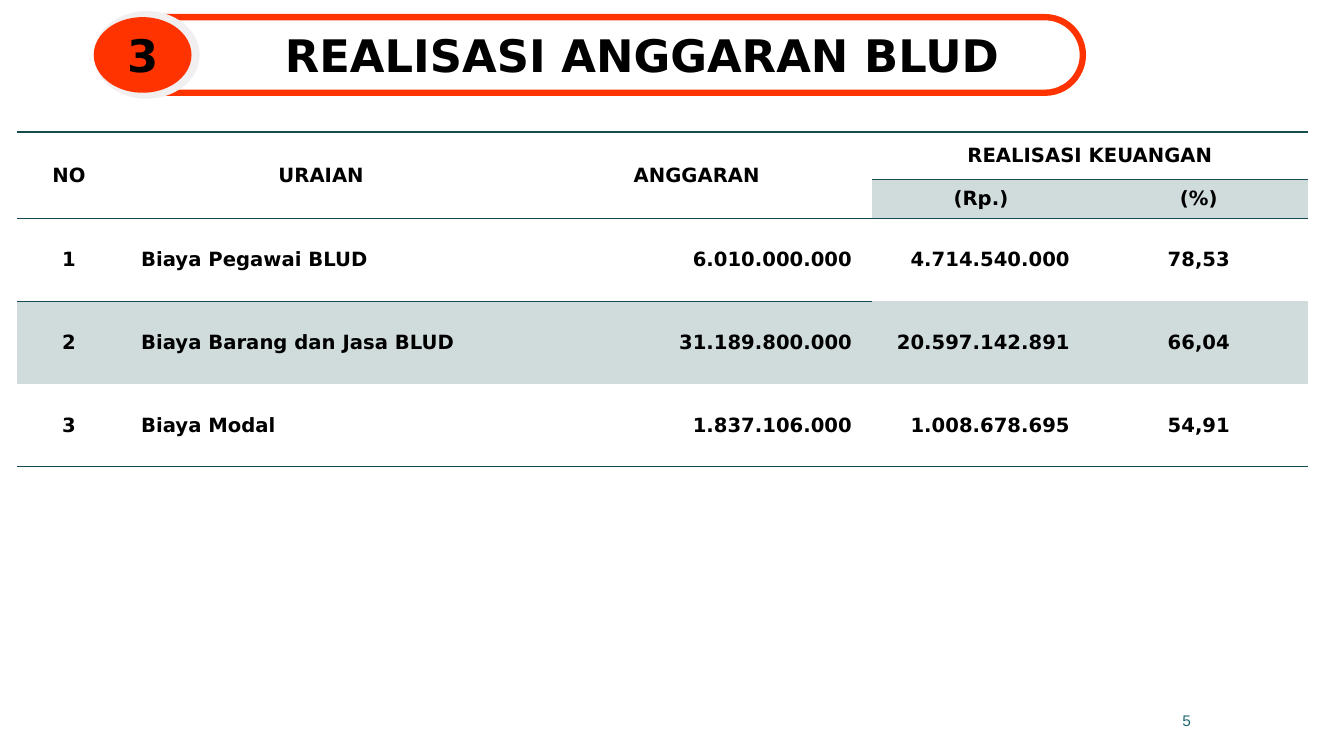
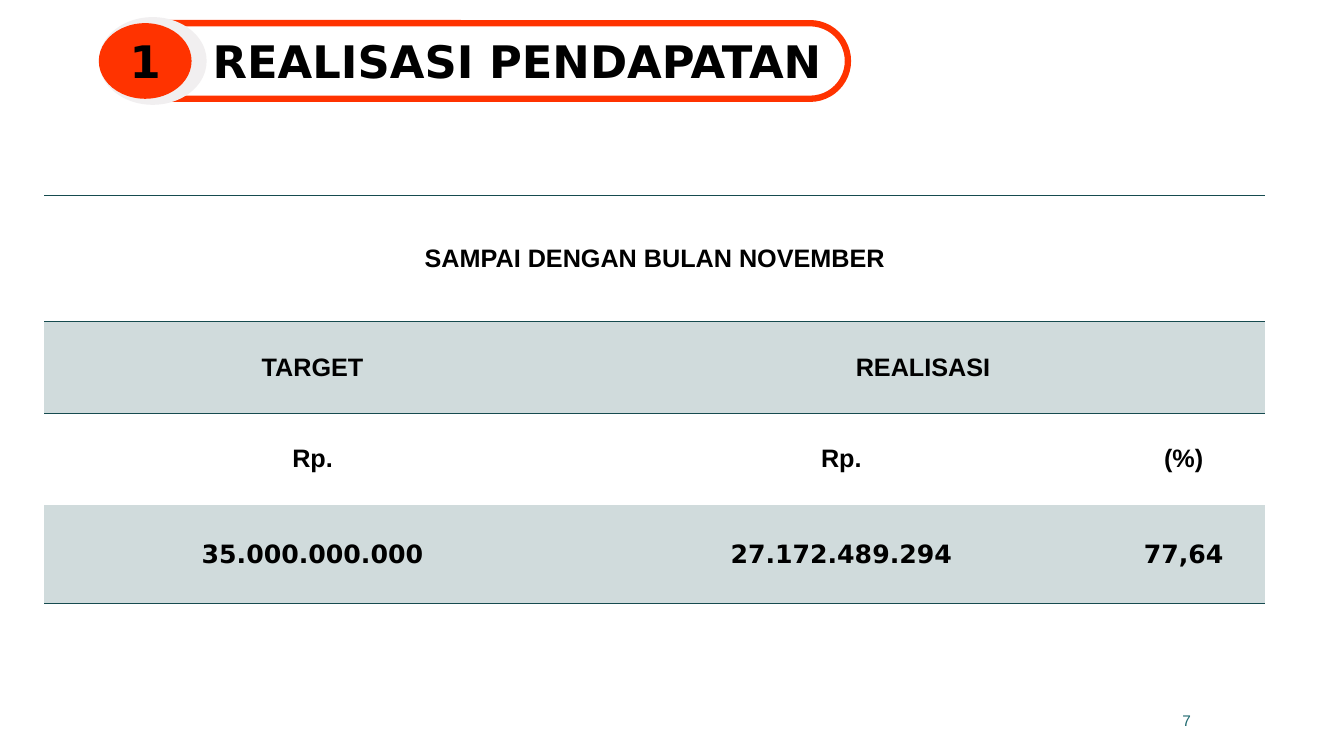
from dataclasses import dataclass

from lxml import etree
from pptx import Presentation
from pptx.dml.color import RGBColor
from pptx.enum import shapes, text
from pptx.oxml import ns
from pptx.util import Inches, Pt


@dataclass(frozen=True)
class Theme:
    """Colours, fonts and type sizes shared by the slides."""
    ink: str = "000000"
    accent: str = "FF3300"
    halo: str = "F1EFF0"
    band: str = "D0DBDC"
    rule: str = "164B4F"
    page: str = "1F696F"
    display: str = "DejaVu Sans"
    plain: str = "Arial"
    title_size: int = 32
    page_size: int = 11
    rule_width: int = 1
    outline_width: float = 4.5


THEME = Theme()
NO_STYLE = "{2D5ABB26-0587-4C30-8999-92F81FD0307C}"
ALIGN = {"l": text.PP_ALIGN.LEFT, "c": text.PP_ALIGN.CENTER, "r": text.PP_ALIGN.RIGHT}

SLIDES = [
    {
        "number": "3",
        "title": "REALISASI ANGGARAN BLUD",
        "title_span": (1.74, 9.26),
        "pill": (1.09, 0.17, 9.65),
        "badge": (0.93, 0.97, 1.05),
        "page": "5",
        "table": {
            "origin": (0.17, 1.31),
            "columns": [1.03, 3.97, 3.48, 2.16, 2.16],
            "heights": [0.47, 0.39, 0.82, 0.82, 0.82],
            "rows": [
                ["NO", "URAIAN", "ANGGARAN", "REALISASI KEUANGAN", ""],
                ["", "", "", "(Rp.)", "(%)"],
                ["1", "Biaya Pegawai BLUD", "6.010.000.000", "4.714.540.000", "78,53"],
                ["2", "Biaya Barang dan Jasa BLUD", "31.189.800.000", "20.597.142.891", "66,04"],
                ["3", "Biaya Modal", "1.837.106.000", "1.008.678.695", "54,91"],
            ],
            "merges": [(0, 0, 1, 0), (0, 1, 1, 1), (0, 2, 1, 2), (0, 3, 0, 4)],
            "rules": {0: range(5), 1: range(3, 5), 2: range(3), 5: range(5)},
            "bands": {1: range(3, 5), 3: range(5)},
            "header_rows": 2,
            "body_align": "clrrc",
            "size": 14,
            "fonts": [THEME.display] * 5,
        },
    },
    {
        "number": "1",
        "title": "REALISASI PENDAPATAN",
        "title_span": (0.83, 8.6),
        "pill": (1.1, 0.23, 7.31),
        "badge": (0.98, 0.92, 1.07),
        "page": "7",
        "table": {
            "origin": (0.44, 1.94),
            "columns": [5.32, 5.17, 1.62],
            "heights": [1.25, 0.91, 0.91, 0.98],
            "rows": [
                ["SAMPAI DENGAN BULAN NOVEMBER", "", ""],
                ["TARGET", "REALISASI", ""],
                ["Rp.", "Rp.", "(%)"],
                ["35.000.000.000", "27.172.489.294", "77,64"],
            ],
            "merges": [(0, 0, 0, 2), (1, 1, 1, 2)],
            "rules": {0: range(3), 1: range(3), 4: range(3)},
            "bands": {1: range(3), 3: range(3)},
            "header_rows": 3,
            "body_align": "ccc",
            "size": 18,
            "fonts": [THEME.plain] * 3 + [THEME.display],
        },
    },
]


def write(frame, words, size, font=THEME.display, color=THEME.ink, align="c", bold=True):
    """Put one formatted, vertically centred paragraph in a text frame."""
    frame.text = words
    frame.vertical_anchor = text.MSO_ANCHOR.MIDDLE
    paragraph = frame.paragraphs[0]
    paragraph.alignment = ALIGN[align]
    for run in paragraph.runs:
        run.font.size, run.font.name, run.font.bold = Pt(size), font, bold
        run.font.color.rgb = RGBColor.from_string(color)


def add_figure(slide, kind, box, fill=None, outline=None):
    """Add a flat preset shape with an optional fill and outline."""
    figure = slide.shapes.add_shape(kind, *map(Inches, box))
    figure.shadow.inherit = False
    if fill:
        figure.fill.solid()
        figure.fill.fore_color.rgb = RGBColor.from_string(fill)
    else:
        figure.fill.background()
    if outline:
        figure.line.color.rgb = RGBColor.from_string(outline)
        figure.line.width = Pt(THEME.outline_width)
    else:
        figure.line.fill.background()
    return figure


def add_heading(slide, content):
    """Build the outlined title pill with its numbered badge."""
    left, top, width = content["pill"]
    height, halo_margin = 0.75, 0.06
    badge_left, badge_width, halo_width = content["badge"]
    title_left, title_width = content["title_span"]

    title = slide.shapes.title
    title.left, title.top = Inches(title_left), Inches(top)
    title.width, title.height = Inches(title_width), Inches(height)
    title.text_frame.auto_size = text.MSO_AUTO_SIZE.NONE
    write(title.text_frame, content["title"], THEME.title_size)

    pill = add_figure(slide, shapes.MSO_SHAPE.ROUNDED_RECTANGLE,
                      (left, top, width, height), outline=THEME.accent)
    pill.adjustments[0] = 0.5
    add_figure(slide, shapes.MSO_SHAPE.OVAL,
               (badge_left, top - halo_margin, halo_width, height + 2 * halo_margin),
               fill=THEME.halo)
    badge = add_figure(slide, shapes.MSO_SHAPE.OVAL,
                       (badge_left, top, badge_width, height), fill=THEME.accent)
    write(badge.text_frame, content["number"], THEME.title_size)


def add_border(cell, side):
    """Draw a rule along the top (lnT) or bottom (lnB) of a cell."""
    line = etree.SubElement(cell._tc.get_or_add_tcPr(), ns.qn("a:" + side),
                            w=str(Pt(THEME.rule_width)))
    fill = etree.SubElement(line, ns.qn("a:solidFill"))
    etree.SubElement(fill, ns.qn("a:srgbClr"), val=THEME.rule)


def add_figures_table(slide, content):
    """Build a ruled and banded table from its content."""
    rows, columns, heights = content["rows"], content["columns"], content["heights"]
    size = (sum(columns), sum(heights))
    table = slide.shapes.add_table(len(rows), len(columns),
                                   *map(Inches, content["origin"] + size)).table
    table.first_row = table.horz_banding = False
    table._tbl.tblPr.find(ns.qn("a:tableStyleId")).text = NO_STYLE
    for column, width in zip(table.columns, columns):
        column.width = Inches(width)
    for row, height in zip(table.rows, heights):
        row.height = Inches(height)

    for boundary, ruled in sorted(content["rules"].items()):
        for c in ruled:
            if boundary > 0:
                add_border(table.cell(boundary - 1, c), "lnB")
            if boundary < len(rows):
                add_border(table.cell(boundary, c), "lnT")

    for r, words_in_row in enumerate(rows):
        for c, words in enumerate(words_in_row):
            cell = table.cell(r, c)
            cell.margin_left = cell.margin_right = Inches(0.2)
            cell.margin_top = cell.margin_bottom = Inches(0.08)
            if c in content["bands"].get(r, ()):
                cell.fill.solid()
                cell.fill.fore_color.rgb = RGBColor.from_string(THEME.band)
            else:
                cell.fill.background()
            align = "c" if r < content["header_rows"] else content["body_align"][c]
            write(cell.text_frame, words, content["size"], content["fonts"][r], align=align)
            cell.vertical_anchor = text.MSO_ANCHOR.MIDDLE

    for top, left, bottom, right in content["merges"]:
        table.cell(top, left).merge(table.cell(bottom, right))


def add_page_number(slide, number):
    """Write the page number at the lower right."""
    box = slide.shapes.add_textbox(*map(Inches, (8.8, 6.95, 3.11, 0.4)))
    box.text_frame.word_wrap = True
    write(box.text_frame, number, THEME.page_size, THEME.plain, THEME.page, "r", bold=False)


def main():
    """Build and save the presentation."""
    deck = Presentation()
    deck.slide_width, deck.slide_height = Inches(13.33), Inches(7.5)
    title_only = deck.slide_layouts[5]
    for content in SLIDES:
        slide = deck.slides.add_slide(title_only)
        add_heading(slide, content)
        add_figures_table(slide, content["table"])
        add_page_number(slide, content["page"])
    deck.save("out.pptx")


if __name__ == "__main__":
    main()
